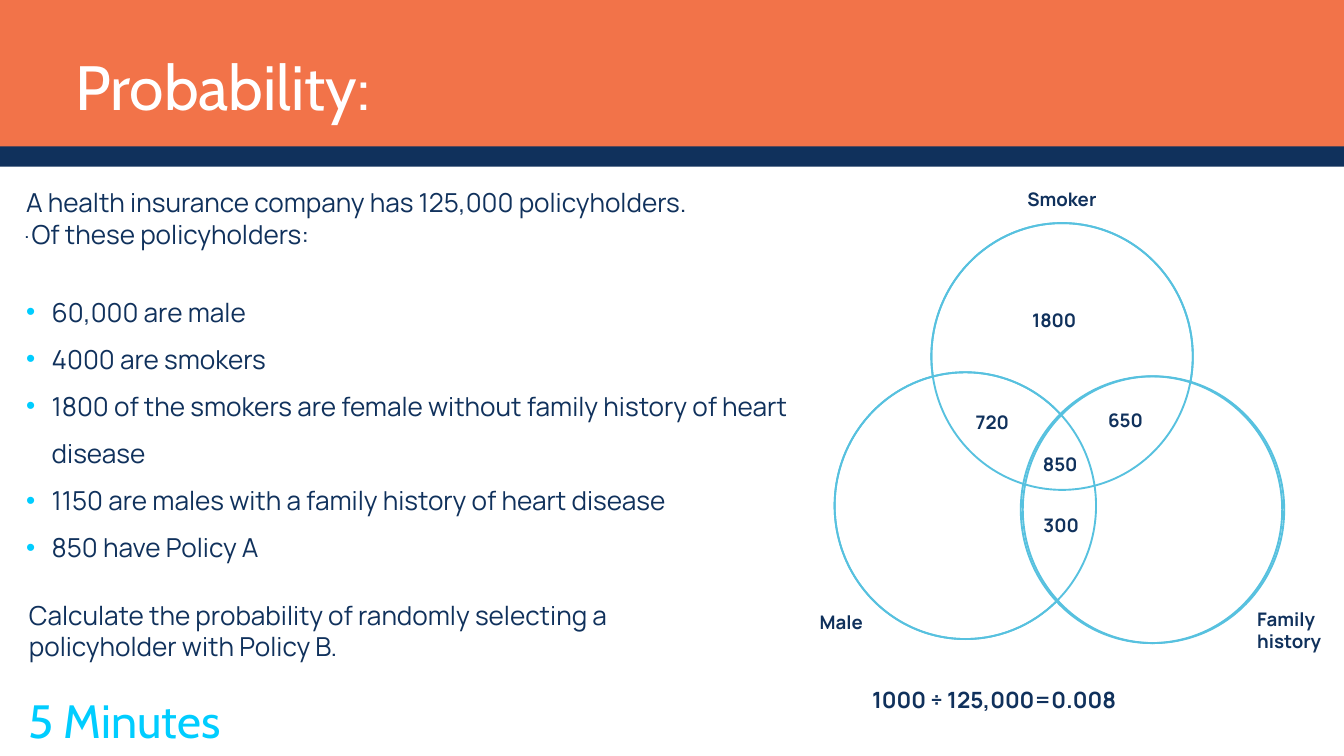
from dataclasses import dataclass

from lxml import etree
from pptx import Presentation
from pptx.dml.color import RGBColor
from pptx.enum import shapes, text
from pptx.oxml import ns
from pptx import util as u

EMU_PER_PX = 9144  # 100 px to the inch
COLOURS = {"orange": "F27349", "navy": "10315C", "cyan": "00CDFF",
           "ring": "57C1DF", "white": "FFFFFF"}


@dataclass(frozen=True)
class Box:
    left: int
    top: int
    width: int
    height: int

    def emu(self) -> list[u.Emu]:
        return [u.Emu(v * EMU_PER_PX)
                for v in (self.left, self.top, self.width, self.height)]


@dataclass(frozen=True)
class Label:
    words: str
    box: Box
    size: int = 20
    bold: bool = True
    font: str = "Manrope"
    colour: str = "navy"
    inset: bool = True
    line_pt: float | None = None
    align: text.PP_ALIGN = text.PP_ALIGN.LEFT


def rgb(name: str) -> RGBColor:
    return RGBColor.from_string(COLOURS[name])


def set_font(paragraph, font: str, size: int, colour: str, bold: bool = False) -> None:
    paragraph.font.name = font
    paragraph.font.size = u.Pt(size)
    paragraph.font.bold = bold
    paragraph.font.color.rgb = rgb(colour)


def place(shape, box: Box, inset: bool = False):
    """Move a text shape and return its wrapped, top-anchored frame."""
    shape.left, shape.top, shape.width, shape.height = box.emu()
    frame = shape.text_frame
    frame.word_wrap = True
    frame.auto_size = text.MSO_AUTO_SIZE.NONE
    frame.vertical_anchor = text.MSO_ANCHOR.TOP
    if not inset:
        frame.margin_left = frame.margin_right = 0
        frame.margin_top = frame.margin_bottom = 0
    return frame


def write_label(shape, label: Label) -> None:
    frame = place(shape, label.box, label.inset)
    frame.text = label.words
    paragraph = frame.paragraphs[0]
    paragraph.alignment = label.align
    if label.line_pt:
        paragraph.line_spacing = u.Pt(label.line_pt)
    set_font(paragraph, label.font, label.size, label.colour, label.bold)


def add_label(slide, label: Label) -> None:
    write_label(slide.shapes.add_textbox(*label.box.emu()), label)


def set_bullet(paragraph, bulleted: bool, margin: int, indent: int) -> None:
    props = paragraph._p.get_or_add_pPr()
    props.set("marL", str(margin * EMU_PER_PX))
    props.set("indent", str(indent * EMU_PER_PX))
    if not bulleted:
        etree.SubElement(props, ns.qn("a:buNone"))
        return
    colour = etree.SubElement(props, ns.qn("a:buClr"))
    etree.SubElement(colour, ns.qn("a:srgbClr"), val=COLOURS["cyan"])
    etree.SubElement(props, ns.qn("a:buChar"), char="•")


def add_band(slide, box: Box, colour: str):
    band = slide.shapes.add_shape(shapes.MSO_SHAPE.RECTANGLE, *box.emu())
    band.shadow.inherit = False
    band.fill.solid()
    band.fill.fore_color.rgb = rgb(colour)
    band.line.fill.background()
    return band


def add_circle(slide, left: int, top: int, filled: bool) -> None:
    circle = slide.shapes.add_shape(shapes.MSO_SHAPE.OVAL,
                                    *Box(left, top, 389, 397).emu())
    circle.shadow.inherit = False
    if filled:
        circle.fill.solid()
        circle.fill.fore_color.rgb = rgb("white")
    else:
        circle.fill.background()
    circle.line.color.rgb = rgb("ring")
    circle.line.width = u.Pt(2)


TITLE = Label("Probability:", Box(112, 53, 1775, 118), 67, False, "Cabin", "white",
              inset=False, line_pt=93.8)
INTRO = ["A health insurance company has 125,000 policyholders.",
         "Of these policyholders:"]
FACTS = ["60,000 are male",
         "4000 are smokers",
         "1800 of the smokers are female without family history of heart disease",
         "1150 are males with a family history of heart disease",
         "850 have Policy A"]
NOTES = [
    Label("5 Minutes", Box(-366, 1010, 1102, 98), 50, False, "Cabin", "cyan",
          line_pt=70, align=text.PP_ALIGN.CENTER),
    Label("Calculate the probability of randomly selecting a policyholder "
          "with Policy B.", Box(43, 892, 998, 94), 28, False, inset=False),
    Label(".", Box(36, 262, 814, 84), 24, False, inset=False, line_pt=71.4),
]
SMOKER, MALE = (1386, 332), (1242, 554)
FAMILY_DISC, FAMILY_RING = (1522, 560), (1519, 560)
VENN_LABELS = [
    Label("Smoker", Box(1519, 275, 164, 44)),
    Label("Male", Box(1210, 904, 164, 44)),
    Label("Family history", Box(1861, 899, 164, 77)),
    Label("850", Box(1542, 669, 164, 44)),
    Label("650", Box(1639, 604, 164, 44)),
    Label("720", Box(1442, 606, 164, 44)),
    Label("1800", Box(1526, 454, 328, 44)),
    Label("300", Box(1543, 760, 164, 44)),
    Label("1000 ÷ 125,000=0.008", Box(1288, 1016, 450, 50), 24),
]


def main() -> None:
    deck = Presentation()
    deck.slide_width, deck.slide_height = Box(0, 0, 2000, 1125).emu()[2:]
    slide = deck.slides.add_slide(deck.slide_layouts[1])

    # Header bands, sent behind the placeholders
    header = add_band(slide, Box(0, 0, 2000, 243), "orange")
    stripe = add_band(slide, Box(0, 218, 2027, 30), "navy")
    for position, band in enumerate((header, stripe), start=2):
        slide.shapes._spTree.insert(position, band._element)

    # Title and policyholder facts
    write_label(slide.shapes.title, TITLE)
    facts = place(slide.placeholders[1], Box(39, 278, 1143, 683))
    facts.text = "\n".join(INTRO + FACTS)
    for index, paragraph in enumerate(facts.paragraphs):
        is_fact = index >= len(INTRO)
        paragraph.space_before = u.Pt(33 if index == len(INTRO) else 0)
        paragraph.line_spacing = 1.5 if is_fact else 1.0
        if is_fact:
            set_bullet(paragraph, True, 38, -38)
        else:
            set_bullet(paragraph, False, 8 * index, 0)
        set_font(paragraph, "Manrope", 28, "navy")

    # Question and timing
    for note in NOTES:
        add_label(slide, note)

    # Venn diagram: white discs, then rings that show through the overlaps
    for family, filled in ((FAMILY_DISC, True), (FAMILY_RING, False)):
        for left, top in (SMOKER, MALE, family):
            add_circle(slide, left, top, filled)
    for label in VENN_LABELS:
        add_label(slide, label)

    deck.save("out.pptx")


if __name__ == "__main__":
    main()
